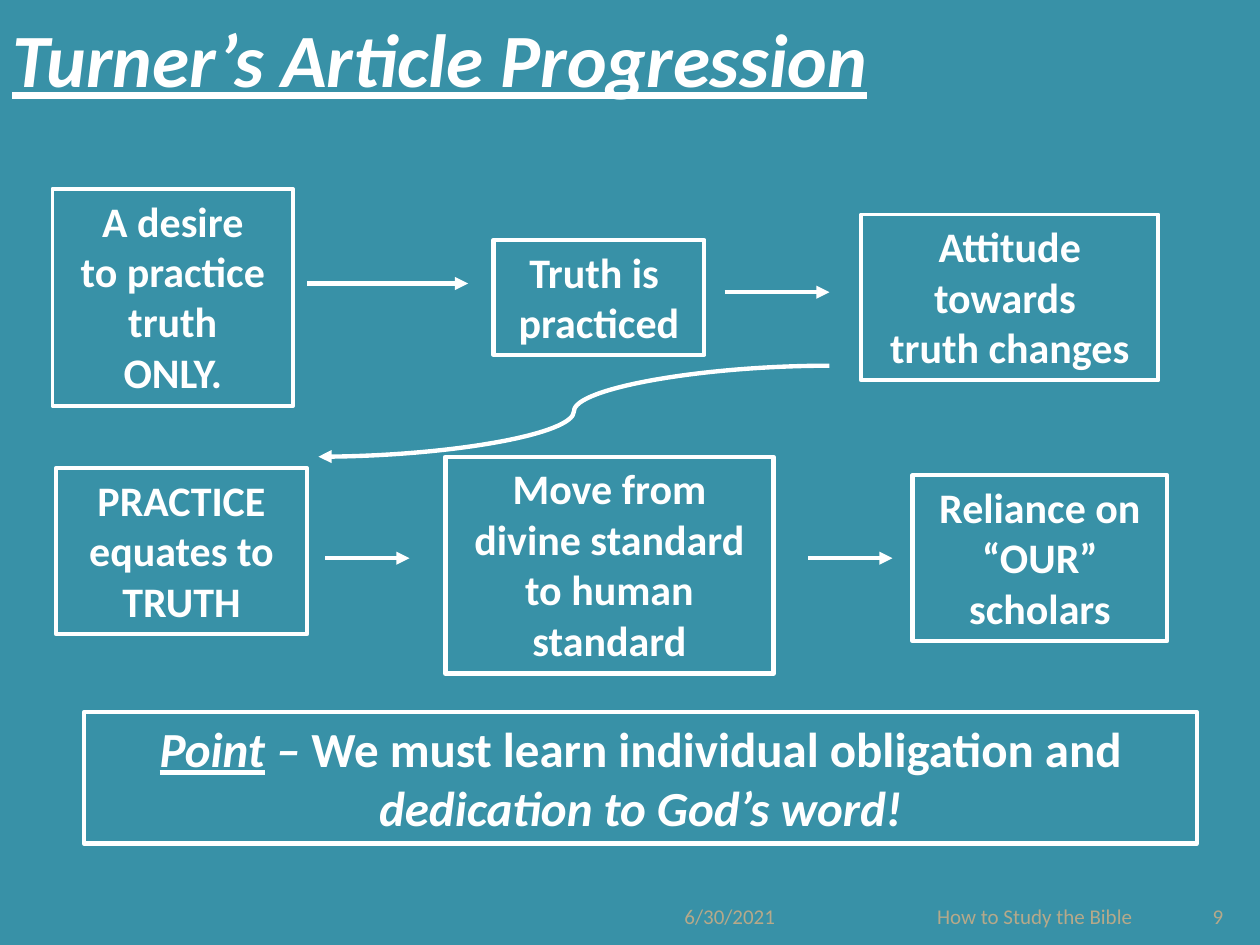
from dataclasses import dataclass
from typing import NamedTuple

from lxml.etree import SubElement
from pptx import Presentation
from pptx.dml.color import RGBColor
from pptx.enum.shapes import MSO_CONNECTOR, MSO_SHAPE
from pptx.enum.text import MSO_ANCHOR, MSO_AUTO_SIZE, PP_ALIGN
from pptx.oxml.ns import qn
from pptx.util import Pt


@dataclass(frozen=True)
class Theme:
    back: RGBColor = RGBColor(0x38, 0x91, 0xA7)
    ink: RGBColor = RGBColor(0xFF, 0xFF, 0xFF)
    muted: RGBColor = RGBColor(0xB6, 0xA9, 0x8A)
    face: str = "Calibri"
    title: float = 43
    point: float = 28
    node: float = 24
    foot: float = 12
    line: float = 2.5
    thin: float = 2.25


class Box(NamedTuple):
    x: float
    y: float
    w: float
    h: float


THEME = Theme()
BOLD = {"bold": True}
SLANT = {"bold": True, "italic": True}
UNDER = {"bold": True, "italic": True, "underline": True}


def assign(obj, form):
    for name, value in form.items():
        setattr(obj, name, value)


def write(shape, lines, size, color, align, frame):
    text = shape.text_frame
    assign(text, frame)
    for i, runs in enumerate(lines):
        para = text.paragraphs[0] if i == 0 else text.add_paragraph()
        para.alignment = align
        for words, form in runs:
            run = para.add_run()
            run.text = words
            assign(run.font, {"name": THEME.face, "size": Pt(size), **form})
            run.font.color.rgb = color


def label(slide, box, lines, size, color, align, frame):
    shape = slide.shapes.add_textbox(*map(Pt, box))
    write(shape, lines, size, color, align, {"word_wrap": True, **frame})


def panel(slide, box, lines, size, width):
    shape = slide.shapes.add_shape(MSO_SHAPE.RECTANGLE, *map(Pt, box))
    shape.shadow.inherit = False
    shape.fill.background()
    shape.line.color.rgb = THEME.ink
    shape.line.width = Pt(width)
    frame = {
        "word_wrap": False,
        "auto_size": MSO_AUTO_SIZE.SHAPE_TO_FIT_TEXT,
        "vertical_anchor": MSO_ANCHOR.TOP,
    }
    write(shape, lines, size, THEME.ink, PP_ALIGN.CENTER, frame)


def arrow(slide, start, end, kind=MSO_CONNECTOR.STRAIGHT):
    link = slide.shapes.add_connector(kind, *map(Pt, (*start, *end)))
    link.line.color.rgb = THEME.ink
    link.line.width = Pt(THEME.line)
    SubElement(link.line._get_or_add_ln(), qn("a:tailEnd"), type="triangle")
    SubElement(link._element.spPr, qn("a:effectLst"))


def heading(slide, box):
    lines = [[("Turner’s Article Progression", UNDER)]]
    frame = {"vertical_anchor": MSO_ANCHOR.MIDDLE}
    label(slide, box, lines, THEME.title, THEME.ink, PP_ALIGN.LEFT, frame)


def row(slide, box, nodes, links):
    mid = box.y + box.h / 2
    for left, width, shift, line, lines in nodes:
        high = 29.2 * len(lines) + 7.2
        place = Box(box.x + left, mid + shift - high / 2, width, high)
        panel(slide, place, [[(words, BOLD)] for words in lines], THEME.node, line)
    for start, end, shift in links:
        arrow(slide, (box.x + start, mid + shift), (box.x + end, mid + shift))


def turn(slide, box):
    start, end = (box.x + box.w, box.y), (box.x, box.y + box.h)
    arrow(slide, start, end, MSO_CONNECTOR.CURVE)


def moral(slide, box):
    lines = [
        [("Point", UNDER), (" – ", SLANT),
         ("We must learn individual obligation and", BOLD)],
        [("dedication to God’s word!", SLANT)],
    ]
    panel(slide, box, lines, THEME.point, THEME.line)


def footer(slide, box):
    parts = [
        (0, 168, "6/30/2021", PP_ALIGN.RIGHT, 7.2),
        (168, 228, "How to Study the Bible", PP_ALIGN.LEFT, 85.5),
        (396, 36, "9", PP_ALIGN.CENTER, 7.2),
    ]
    for left, width, words, align, inset in parts:
        place = Box(box.x + left, box.y, width, box.h)
        frame = {"vertical_anchor": MSO_ANCHOR.BOTTOM, "margin_left": Pt(inset)}
        label(slide, place, [[(words, {})]], THEME.foot, THEME.muted, align, frame)


def main():
    deck = Presentation()
    assign(deck, {"slide_width": Pt(720), "slide_height": Pt(540)})
    slide = deck.slides.add_slide(deck.slide_layouts[6])
    slide.background.fill.solid()
    slide.background.fill.fore_color.rgb = THEME.back

    heading(slide, Box(0, 0, 535, 66))
    first = [
        (0, 137.5, 0, THEME.thin, ["A desire", "to practice", "truth", "ONLY."]),
        (252, 120.5, 0, THEME.line, ["Truth is ", "practiced"]),
        (462, 170, 0, THEME.thin, ["Attitude", "towards ", "truth changes"]),
    ]
    row(slide, Box(30, 108, 632, 124), first, [(145.5, 237.5, -8), (384, 444, -3)])
    turn(slide, Box(182, 209, 292, 52))
    second = [
        (0, 143.5, -4, THEME.line, ["PRACTICE", "equates to", "TRUTH"]),
        (222.5, 187.5, 4, THEME.line,
         ["Move from", "divine standard", "to human", "standard"]),
        (489.5, 145.5, 0, THEME.line, ["Reliance on", "“OUR”", "scholars"]),
    ]
    row(slide, Box(32, 257, 635, 124), second, [(154, 202, 0), (430, 478, 0)])
    moral(slide, Box(48, 407, 636, 75))
    footer(slide, Box(282, 497, 432, 37.5))
    deck.save("out.pptx")


if __name__ == "__main__":
    main()
